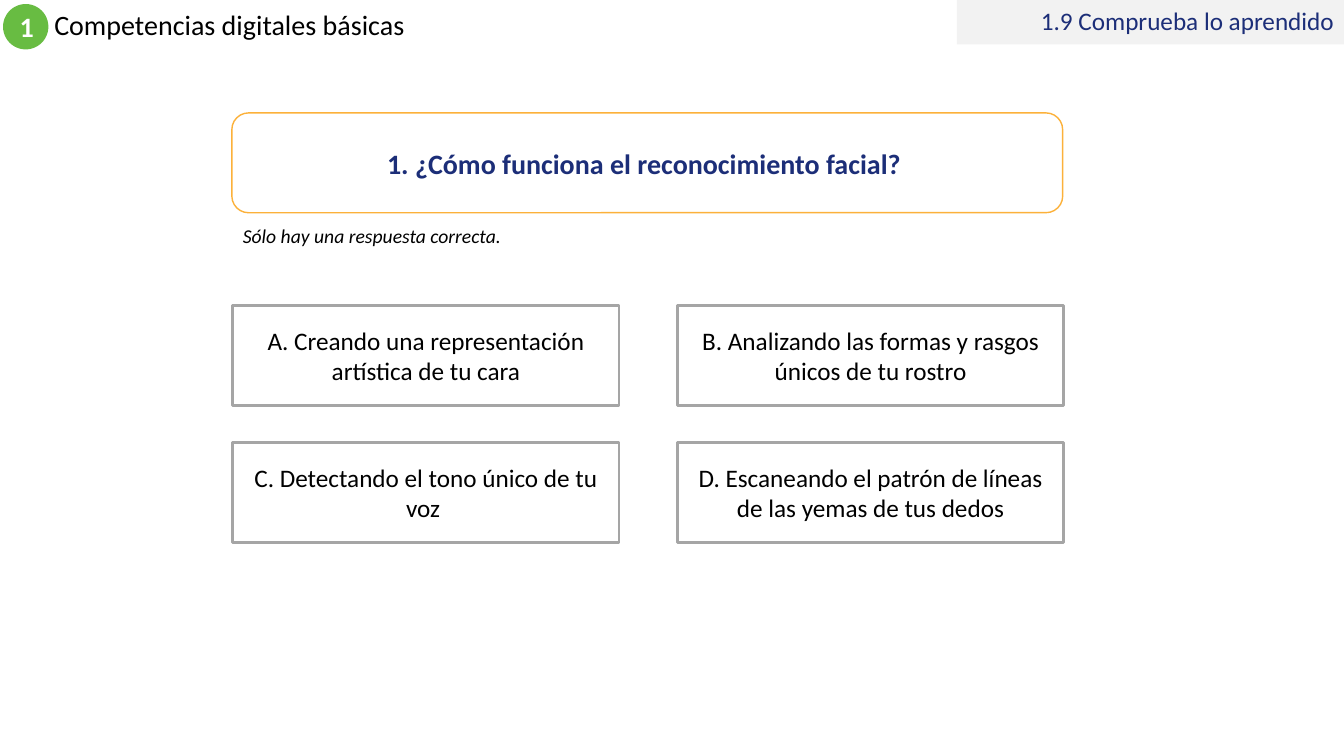
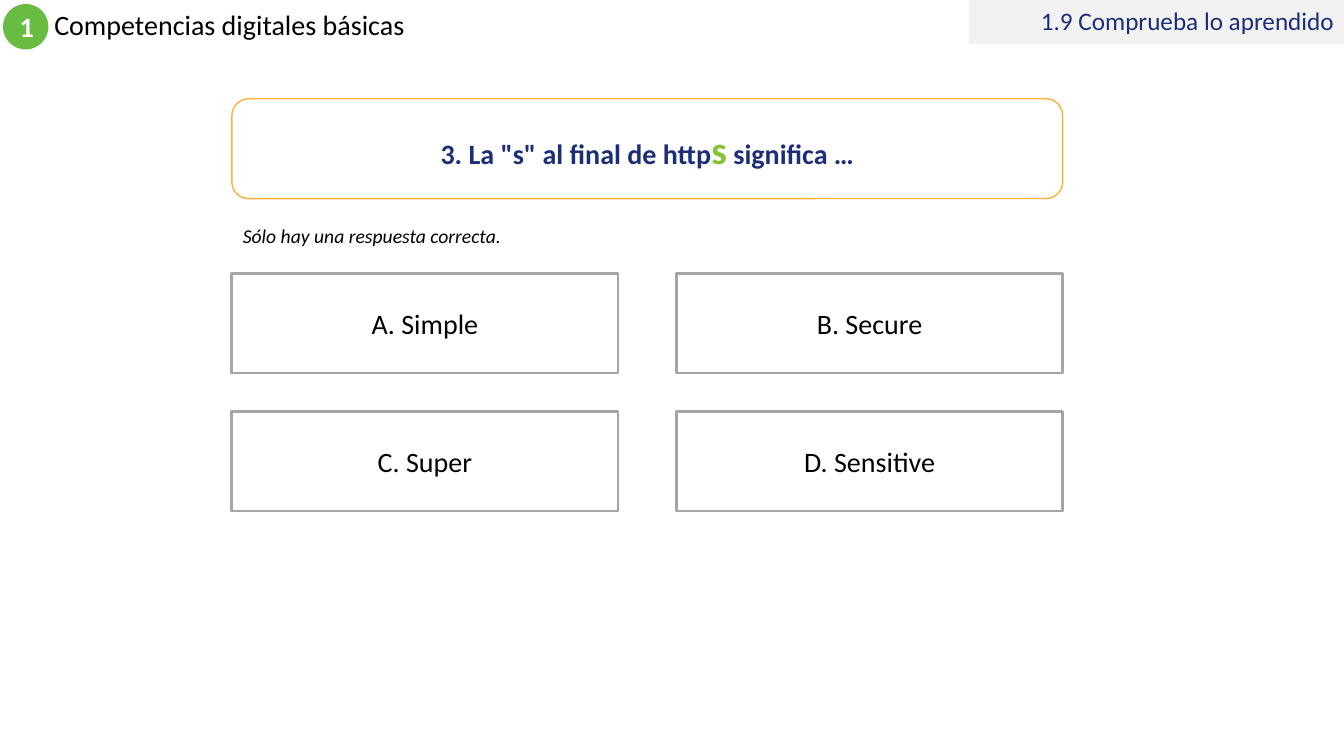
import pptx
import pptx.util
import pptx.dml.color
import pptx.enum.shapes
import pptx.enum.text

SCALE = 9144
WIDE, HIGH = 1333, 750
FONT = "Calibri"
COLORS = {
    "white": "FFFFFF",
    "black": "000000",
    "navy": "1C2E78",
    "green": "68BC42",
    "lime": "84C337",
    "gold": "FCB13A",
    "gray": "A5A5A5",
    "pale": "F2F2F2",
}
KIND = pptx.enum.shapes.MSO_SHAPE
ALIGN = pptx.enum.text.PP_ALIGN
ANCHOR = pptx.enum.text.MSO_ANCHOR


def px(num):
    return pptx.util.Emu(num * SCALE)


def tint(name):
    return pptx.dml.color.RGBColor.from_string(COLORS[name])


def style(run, size, color, bold=False, slant=False):
    font = run.font
    font.name = FONT
    font.size = pptx.util.Pt(size)
    font.color.rgb = tint(color)
    font.bold = bold
    font.italic = slant


def write(shape, text, size, color, align=ALIGN.CENTER, space=None, **looks):
    frame = shape.text_frame
    frame.text = text
    frame.word_wrap = True
    frame.vertical_anchor = ANCHOR.MIDDLE
    para = frame.paragraphs[0]
    para.alignment = align
    para.line_spacing = space
    style(para.runs[0], size, color, **looks)
    return para


def panel(slide, kind, box, fill, edge=None, weight=1):
    shape = slide.shapes.add_shape(kind, *map(px, box))
    shape.shadow.inherit = False
    shape.fill.solid()
    shape.fill.fore_color.rgb = tint(fill)
    if edge:
        shape.line.color.rgb = tint(edge)
        shape.line.width = pptx.util.Pt(weight)
    else:
        shape.line.fill.background()
    return shape


def header(slide, box, tag):
    left, top, width, height = box
    title = slide.shapes.add_textbox(*map(px, (left + 44, top + 4, 800, 45)))
    write(title, "Competencias digitales básicas", 20, "black", ALIGN.LEFT, 0.9)
    badge = panel(slide, KIND.OVAL, (left + 3, top + 4, 45, 45), "green")
    write(badge, "1", 20, "white", bold=True)
    band = panel(slide, KIND.RECTANGLE, (left + width - tag, top, tag, height), "pale")
    write(band, "1.9 Comprueba lo aprendido", 18, "navy", ALIGN.RIGHT, 0.9)


def question(slide, box, parts):
    card = panel(slide, KIND.ROUNDED_RECTANGLE, box, "white", "gold")
    first, *rest = parts
    para = write(card, *first, bold=True)
    for text, size, color in rest:
        run = para.add_run()
        run.text = text
        style(run, size, color, bold=True)


def hint(slide, box):
    note = slide.shapes.add_textbox(*map(px, box))
    write(note, "Sólo hay una respuesta correcta.", 14, "black", ALIGN.LEFT, slant=True)
    note.text_frame.vertical_anchor = ANCHOR.TOP


def answers(slide, box, texts, size):
    left, top, width, height = box
    wide, high = 383, 99
    for num, text in enumerate(texts):
        row, col = divmod(num, 2)
        spot = (left + col * (width - wide), top + row * (height - high), wide, high)
        cell = panel(slide, KIND.RECTANGLE, spot, "white", "gray", 2)
        write(cell, text, size, "black")


def quiz(deck, tag, ask, parts, grid, texts, size):
    slide = deck.slides.add_slide(deck.slide_layouts[6])
    header(slide, (0, 0, WIDE, 44), tag)
    question(slide, (230, ask, 824, 99), parts)
    hint(slide, (231, 217, 304, 34))
    answers(slide, grid, texts, size)


def main():
    deck = pptx.Presentation()
    deck.slide_width, deck.slide_height = px(WIDE), px(HIGH)
    quiz(
        deck, 384, 112,
        [("1. ¿Cómo funciona el reconocimiento facial? ", 20, "navy")],
        (231, 303, 824, 235),
        [
            "A. Creando una representación artística de tu cara",
            "B. Analizando las formas y rasgos únicos de tu rostro",
            "C. Detectando el tono único de tu voz ",
            "D. Escaneando el patrón de líneas de las yemas de tus dedos",
        ],
        18,
    )
    quiz(
        deck, 372, 98,
        [
            ('3. La "s" al final de http', 20, "navy"),
            ("s", 28, "lime"),
            (" significa …", 20, "navy"),
        ],
        (230, 271, 824, 236),
        ["A. Simple", "B. Secure", "C. Super", "D. Sensitive"],
        20,
    )
    deck.save("out.pptx")


if __name__ == "__main__":
    main()
